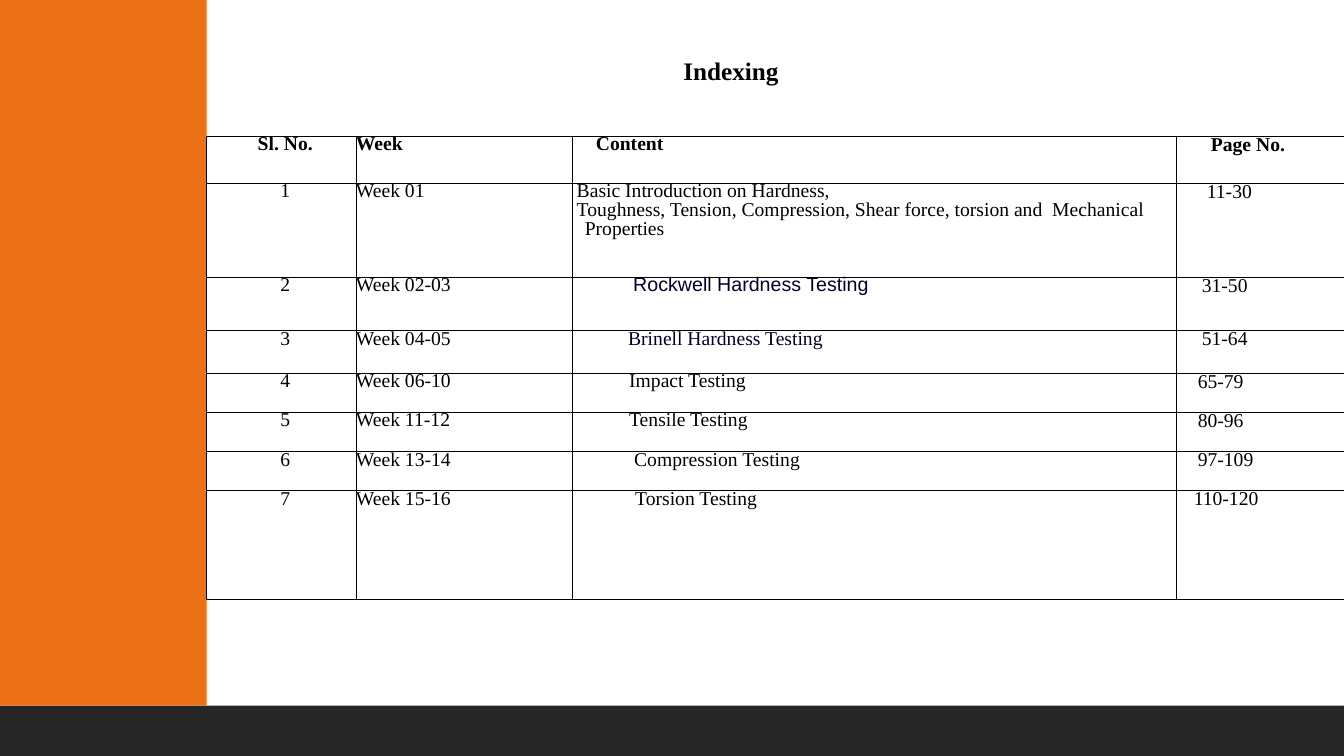
import pptx
import pptx.util
import pptx.dml.color
import pptx.enum.shapes
import pptx.enum.text
import pptx.oxml
import pptx.oxml.ns

Inches, Pt = pptx.util.Inches, pptx.util.Pt
COLORS = {"ink": "000000", "navy": "00002C", "orange": "EC7016", "dark": "262626"}
SERIF = "Times New Roman"
TITLE = "Indexing"
BANDS = [("dark", (0, 7, 13.33, 0.5)), ("orange", (0, 0, 2.05, 7))]
COLUMN_WIDTHS = [1.48, 2.15, 5.99, 1.67]
LINE_HEIGHTS = [13.4, 13.4, 13.4, 13.8]
ROW_HEIGHTS = [0.47, 0.93, 0.53, 0.42, 0.39, 0.39, 0.39, 1.08]
ROWS = [
    ("Sl. No.", "Week", "Content", "Page No."),
    ("1", "Week 01", "Basic Introduction on Hardness,\nToughness, Tension, Compression, "
     "Shear force, torsion and  Mechanical Properties", "11-30"),
    ("2", "Week 02-03", "Rockwell Hardness Testing", "31-50"),
    ("3", "Week 04-05", "Brinell Hardness Testing", "51-64"),
    ("4", "Week 06-10", "Impact Testing", "65-79"),
    ("5", "Week 11-12", "Tensile Testing", "80-96"),
    ("6", "Week 13-14", "Compression Testing", "97-109"),
    ("7", "Week 15-16", "Torsion Testing", "110-120"),
]
CONTENT_INDENTS = [0.23, 0.12, 0.6, 0.55, 0.56, 0.56, 0.61, 0.62]
PAGE_INDENTS = [0.34, 0.3, 0.25, 0.25, 0.21, 0.21, 0.21, 0.17]
HANGING = 0.08
SPECIAL_FONTS = {(2, 2): ("Arial", "navy"), (3, 2): (SERIF, "navy")}


def color(name):
    return pptx.dml.color.RGBColor.from_string(COLORS[name])


def format_font(font, name, size, bold, ink):
    for key, value in {"name": name, "size": Pt(size), "bold": bold}.items():
        setattr(font, key, value)
    font.color.rgb = color(ink)


def indent(para, left, first=0):
    properties = para._p.get_or_add_pPr()
    properties.set("marL", str(Inches(left)))
    properties.set("indent", str(Inches(first)))


def add_borders(cell):
    properties = cell._tc.get_or_add_tcPr()
    for side in ("lnL", "lnR", "lnT", "lnB"):
        properties.append(pptx.oxml.parse_xml(
            f'<a:{side} {pptx.oxml.ns.nsdecls("a")} w="{Pt(0.5)}"><a:solidFill>'
            f'<a:srgbClr val="{COLORS["ink"]}"/></a:solidFill></a:{side}>'))


def fill_cell(cell, row, column):
    for side in ("left", "right", "top", "bottom"):
        setattr(cell, f"margin_{side}", 0)
    add_borders(cell)
    cell.fill.background()
    cell.text = ROWS[row][column]
    name, ink = SPECIAL_FONTS.get((row, column), (SERIF, "ink"))
    left = (0.08, 0, CONTENT_INDENTS[row], PAGE_INDENTS[row])[column]
    for para in cell.text_frame.paragraphs:
        indent(para, left, -HANGING if (row, column) == (1, 2) else 0)
        para.line_spacing = Pt(LINE_HEIGHTS[column])
        if column == 0:
            para.alignment = pptx.enum.text.PP_ALIGN.CENTER
        for span in para.runs:
            format_font(span.font, name, 14, row == 0, ink)


deck = pptx.Presentation()
deck.slide_width, deck.slide_height = Inches(13.33), Inches(7.5)
page = deck.slides.add_slide(deck.slide_layouts[6])

for ink, place in BANDS:
    band = page.shapes.add_shape(
        pptx.enum.shapes.MSO_SHAPE.RECTANGLE, *map(Inches, place))
    band.shadow.inherit = False
    band.fill.solid()
    band.fill.fore_color.rgb = color(ink)
    band.line.fill.background()

table = page.shapes.add_table(
    len(ROWS), len(COLUMN_WIDTHS), Inches(2.05), Inches(1.35),
    Inches(sum(COLUMN_WIDTHS)), Inches(sum(ROW_HEIGHTS))).table
table.first_row = table.horz_banding = False
for column, width in enumerate(COLUMN_WIDTHS):
    table.columns[column].width = Inches(width)
for row, height in enumerate(ROW_HEIGHTS):
    table.rows[row].height = Inches(height)
    for column in range(len(COLUMN_WIDTHS)):
        fill_cell(table.cell(row, column), row, column)

box = page.shapes.add_textbox(Inches(6.67), Inches(0.5), Inches(1.23), Inches(0.4))
box.text_frame.word_wrap = True
box.text_frame.text = TITLE
para = box.text_frame.paragraphs[0]
indent(para, 0.01)
format_font(para.runs[0].font, SERIF, 18, True, "ink")

deck.save("out.pptx")
